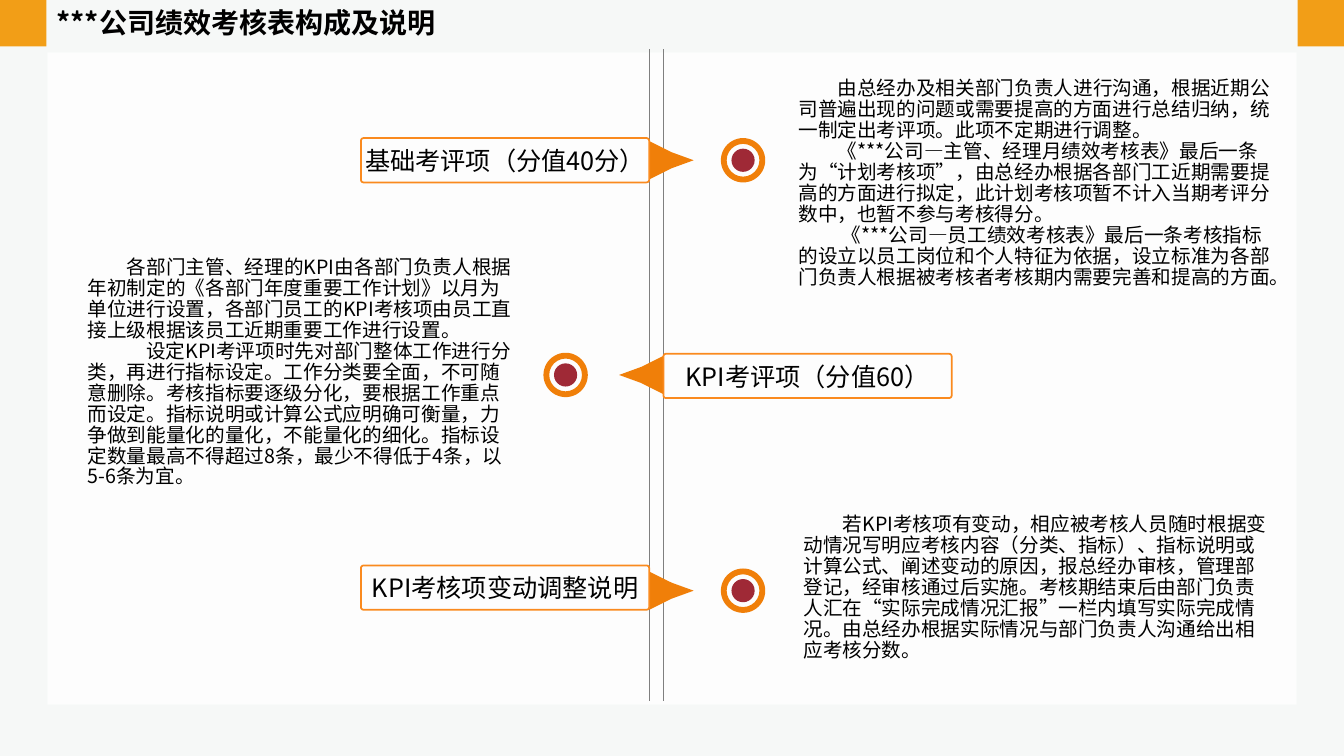
from lxml import etree
from pptx import Presentation
from pptx.dml.color import RGBColor
from pptx.enum.shapes import MSO_CONNECTOR, MSO_SHAPE
from pptx.enum.text import MSO_ANCHOR, MSO_AUTO_SIZE, PP_ALIGN
from pptx.oxml.ns import qn
from pptx.util import Inches, Pt

RECTANGLE, ROUNDED = MSO_SHAPE.RECTANGLE, MSO_SHAPE.ROUNDED_RECTANGLE
DONUT, OVAL = MSO_SHAPE.DONUT, MSO_SHAPE.OVAL
STRAIGHT = MSO_CONNECTOR.STRAIGHT
TOP, MIDDLE = MSO_ANCHOR.TOP, MSO_ANCHOR.MIDDLE
LEFT, CENTER = PP_ALIGN.LEFT, PP_ALIGN.CENTER
NO_AUTOFIT = MSO_AUTO_SIZE.NONE

FONT = "Noto Sans CJK SC"
CORNER, ORANGE, OUTLINE, RED = "F29E17", "F07F09", "FA8A1E", "9F2936"
SPINE_LEFT, SPINE_RIGHT = 6.44, 6.58
LABEL_WIDTH, LABEL_HEIGHT = 2.86, 0.44
RING_SIZE, DOT_SIZE = 0.44, 0.23
# Upper edge of the arrow, from its base to its tip
ARROW_EDGE = [(0, -0.19), (0.02, -0.18), (0.22, -0.08), (0.44, 0)]

TITLE = "***公司绩效考核表构成及说明"
# label, label top, points right, marker centre, text box, [(first-line indent, text)]
SECTIONS = [
    ("基础考评项（分值40分）", 1.37, True, (7.37, 1.59), (7.82, 0.65, 4.88, 2.34), [
        (0.39, "由总经办及相关部门负责人进行沟通，根据近期公司普遍出现的问题或需要提高的方面"
               "进行总结归纳，统一制定出考评项。此项不定期进行调整。"),
        (0.39, "《***公司—主管、经理月绩效考核表》最后一条为“计划考核项”，由总经办根据各部门工"
               "近期需要提高的方面进行拟定，此计划考核项暂不计入当期考评分数中，也暂不参与考核得分。"),
        (0.43, "《***公司—员工绩效考核表》最后一条考核指标的设立以员工岗位和个人特征为依据，"
               "设立标准为各部门负责人根据被考核者考核期内需要完善和提高的方面。"),
    ]),
    ("KPI考评项（分值60）", 3.51, False, (5.61, 3.72), (0.77, 2.49, 4.48, 2.41), [
        (0.39, "各部门主管、经理的KPI由各部门负责人根据年初制定的《各部门年度重要工作计划》以月为"
               "单位进行设置，各部门员工的KPI考核项由员工直接上级根据该员工近期重要工作进行设置。"),
        (0.58, "设定KPI考评项时先对部门整体工作进行分类，再进行指标设定。工作分类要全面，不可随意"
               "删除。考核指标要逐级分化，要根据工作重点而设定。指标说明或计算公式应明确可衡量，"
               "力争做到能量化的量化，不能量化的细化。指标设定数量最高不得超过8条，最少不得低于4条，"
               "以5-6条为宜。"),
    ]),
    ("KPI考核项变动调整说明", 5.61, True, (7.37, 5.86), (7.87, 4.88, 4.83, 1.9), [
        (0.39, "若KPI考核项有变动，相应被考核人员随时根据变动情况写明应考核内容（分类、指标）、"
               "指标说明或计算公式、阐述变动的原因，报总经办审核，管理部登记，经审核通过后实施。"
               "考核期结束后由部门负责人汇在“实际完成情况汇报”一栏内填写实际完成情况。"
               "由总经办根据实际情况与部门负责人沟通给出相应考核分数。"),
    ]),
]


def color(value):
    return RGBColor.from_string(value)


def fill_plain(shape, value):
    shape.shadow.inherit = False
    shape.fill.solid()
    shape.fill.fore_color.rgb = color(value)
    shape.line.fill.background()


def add_filled(slide, kind, box, value):
    shape = slide.shapes.add_shape(kind, *map(Inches, box))
    fill_plain(shape, value)
    return shape


def format_paragraph(paragraph, size, alignment=LEFT, bold=False):
    paragraph.alignment = alignment
    for run in paragraph.runs:
        run.font.size = Pt(size)
        run.font.name = FONT
        run.font.bold = bold
        run.font.color.rgb = color("000000")
        east_asian = etree.SubElement(run._r.get_or_add_rPr(), qn("a:ea"))
        east_asian.set("typeface", FONT)


def add_frame(slide):
    """Background, translucent panel, corner squares and the double spine."""
    slide.background.fill.solid()
    slide.background.fill.fore_color.rgb = color("F6F8F7")
    panel = add_filled(slide, RECTANGLE, (0.47, 0.52, 12.39, 6.47), "FFFFFF")
    panel_color = panel._element.spPr.find(qn("a:solidFill"))[0]
    etree.SubElement(panel_color, qn("a:alpha")).set("val", "81000")
    for left in (0, 12.87):
        add_filled(slide, RECTANGLE, (left, 0, 0.46, 0.46), CORNER)
    for x in (SPINE_LEFT, SPINE_RIGHT):
        ends = map(Inches, (x, 0.49, x, 6.95))
        line = slide.shapes.add_connector(STRAIGHT, *ends)
        line.line.color.rgb = color("7F7F7F")
        line.line.width = Pt(0.5)
        etree.SubElement(line._element.spPr, qn("a:effectLst"))


def fill_title(slide, box):
    title = slide.shapes.title
    title.left, title.top, title.width, title.height = map(Inches, box)
    text_frame = title.text_frame
    text_frame.text = TITLE
    text_frame.auto_size = NO_AUTOFIT
    text_frame.vertical_anchor = TOP
    format_paragraph(text_frame.paragraphs[0], 20, bold=True)


def add_label(slide, left, top, text):
    label = slide.shapes.add_shape(
        ROUNDED, *map(Inches, (left, top, LABEL_WIDTH, LABEL_HEIGHT)))
    label.shadow.inherit = False
    label.adjustments[0] = 0.06
    label.fill.background()
    label.line.color.rgb = color(OUTLINE)
    label.line.width = Pt(1.25)
    text_frame = label.text_frame
    text_frame.text = text
    text_frame.word_wrap = False
    text_frame.vertical_anchor = MIDDLE
    format_paragraph(text_frame.paragraphs[0], 18, CENTER)


def add_arrow(slide, base_x, center_y, direction):
    lower_edge = [(x, -y) for x, y in reversed(ARROW_EDGE[:-1])]
    points = [(Inches(base_x + direction * x), Inches(center_y + y))
              for x, y in ARROW_EDGE + lower_edge]
    builder = slide.shapes.build_freeform(*points[0])
    builder.add_line_segments(points[1:], close=True)
    fill_plain(builder.convert_to_shape(), ORANGE)


def add_marker(slide, center):
    for kind, size, value in ((DONUT, RING_SIZE, ORANGE), (OVAL, DOT_SIZE, RED)):
        left, top = (position - size / 2 for position in center)
        shape = add_filled(slide, kind, (left, top, size, size), value)
        if kind == DONUT:
            shape.adjustments[0] = 0.131


def add_description(slide, box, entries):
    text_frame = slide.shapes.add_textbox(*map(Inches, box)).text_frame
    text_frame.word_wrap = True
    text_frame.vertical_anchor = MIDDLE
    text_frame.text = "\n".join(text for _, text in entries)
    for paragraph, (indent, _) in zip(text_frame.paragraphs, entries):
        format_paragraph(paragraph, 14)
        paragraph.line_spacing = Pt(15)
        paragraph._p.get_or_add_pPr().set("indent", str(Inches(indent)))


def add_section(slide, label, label_top, points_right, marker, box, entries):
    base_x = SPINE_LEFT if points_right else SPINE_RIGHT
    label_left = base_x - LABEL_WIDTH if points_right else base_x
    add_arrow(slide, base_x, marker[1], 1 if points_right else -1)
    add_marker(slide, marker)
    add_description(slide, box, entries)
    add_label(slide, label_left, label_top, label)


def main():
    presentation = Presentation()
    presentation.slide_width = Inches(13.33)
    presentation.slide_height = Inches(7.5)
    slide = presentation.slides.add_slide(presentation.slide_layouts[5])
    add_frame(slide)
    fill_title(slide, (0.46, 0, 6.25, 0.44))
    for section in SECTIONS:
        add_section(slide, *section)
    presentation.save("out.pptx")


if __name__ == "__main__":
    main()
